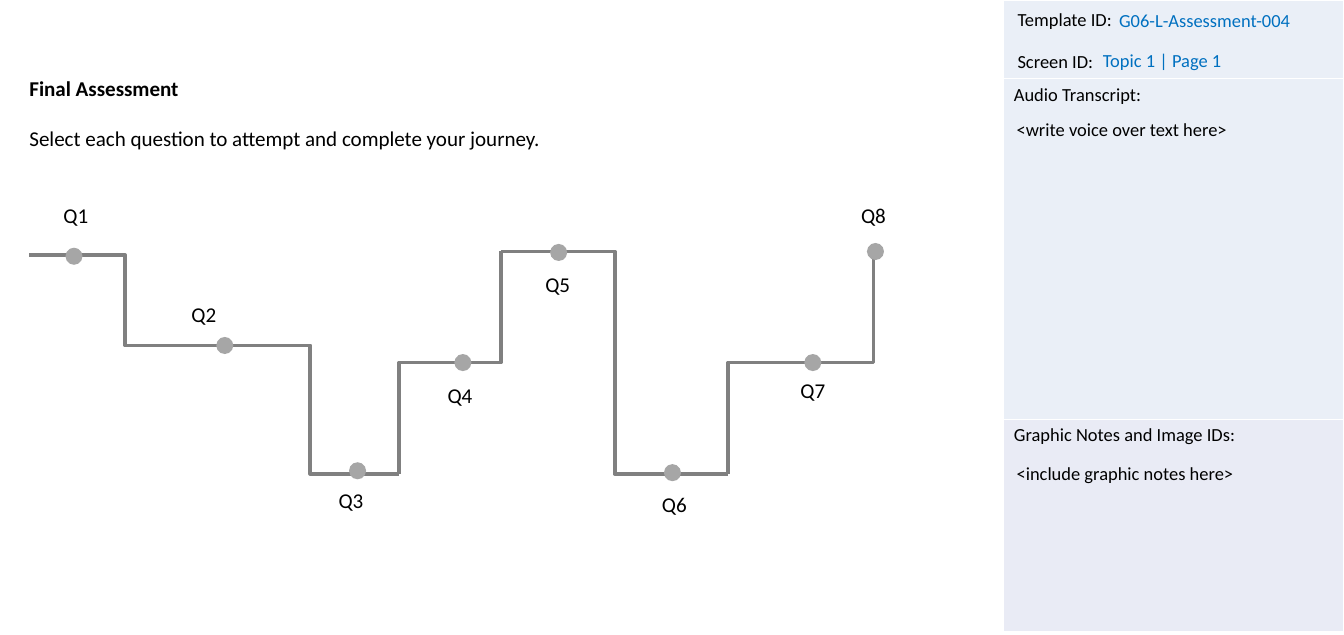
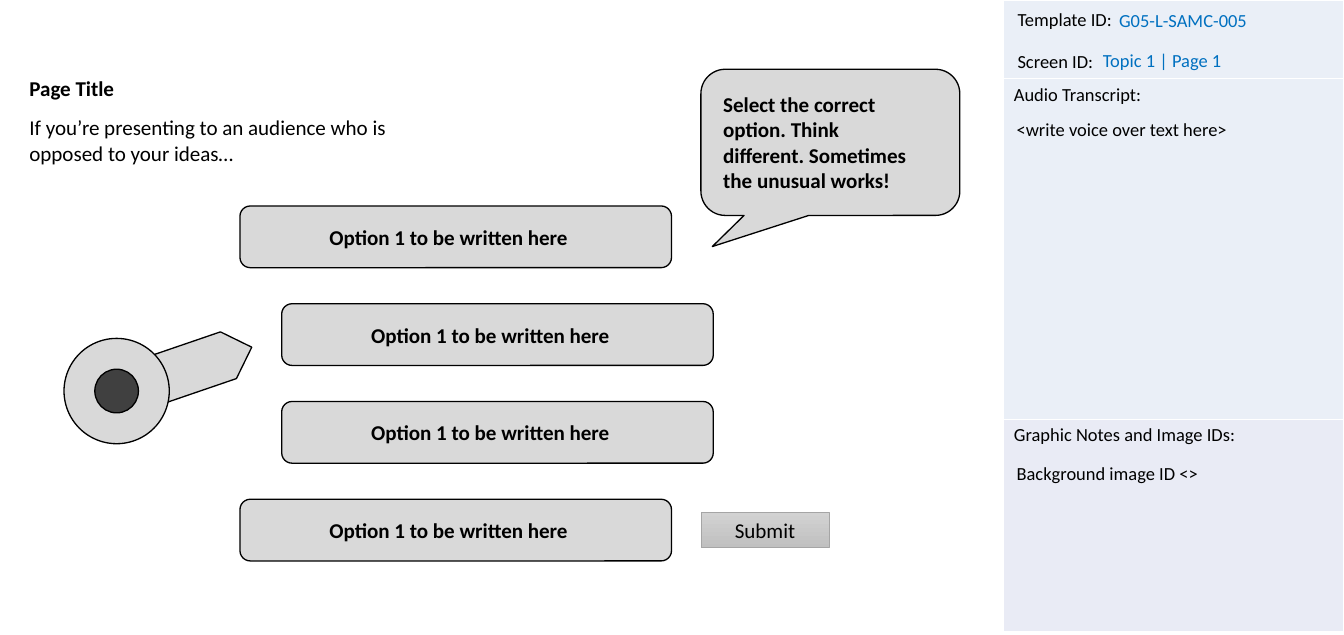
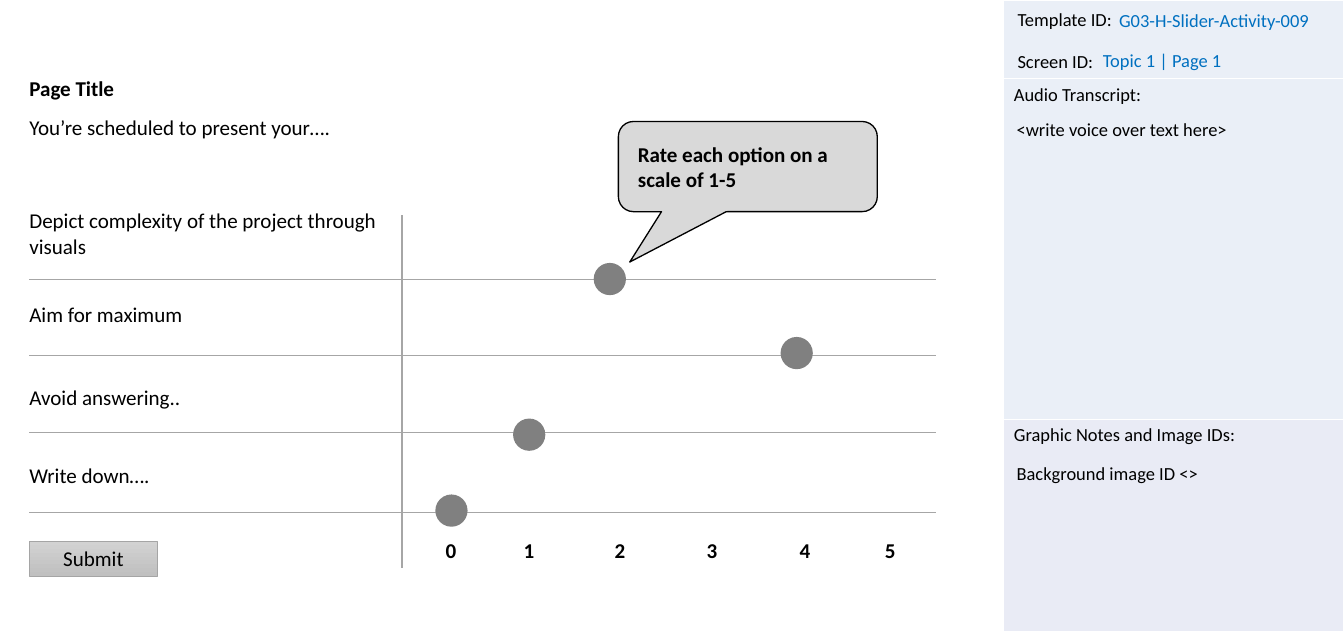
from dataclasses import dataclass

from lxml.etree import SubElement
from pptx import Presentation
from pptx.dml.color import RGBColor
from pptx.enum.shapes import MSO_CONNECTOR as Link, MSO_SHAPE as Kind
from pptx.enum.text import MSO_ANCHOR as Anchor, MSO_AUTO_SIZE as Auto, PP_ALIGN as Align
from pptx.oxml.ns import qn
from pptx.util import Inches, Pt


@dataclass(frozen=True)
class Theme:
    font: str = "Calibri"
    small: int = 14
    text: int = 16
    black: str = "000000"
    blue: str = "0070C0"
    pale: str = "EAEFF7"
    mist: str = "E9EBF5"
    face: str = "D9D9D9"
    core: str = "404040"
    track: str = "808080"
    dot: str = "A6A6A6"
    edge: str = "A5A5A5"
    light: str = "D2D2D2"
    dark: str = "C0C0C0"


LOOK = Theme()
FLAT = (0, 0, 0, 0)
LABEL = (0.1, 0.05, 0.1, 0.05)
ROOMY = (0.16, 0.16, 0.31, 0.16)


def rgb(hue):
    return RGBColor.from_string(hue)


def inch(*sizes):
    return [Inches(size) for size in sizes]


def style(para, size=LOOK.text, hue=LOOK.black, bold=False, align=Align.LEFT):
    para.alignment = align
    font = para.font
    font.name, font.size, font.bold = LOOK.font, Pt(size), bold
    font.color.rgb = rgb(hue)


def write(frame, text, pad=FLAT, anchor=Anchor.TOP, **look):
    frame.text = text
    frame.word_wrap = True
    frame.auto_size = Auto.NONE
    frame.vertical_anchor = anchor
    (frame.margin_left, frame.margin_top,
     frame.margin_right, frame.margin_bottom) = inch(*pad)
    style(frame.paragraphs[0], **look)


def label(slide, x, y, w, h, text, **look):
    box = slide.shapes.add_textbox(*inch(x, y, w, h))
    write(box.text_frame, text, **look)


def block(slide, kind, x, y, w, h, fill=None, line=None, width=1):
    shape = slide.shapes.add_shape(kind, *inch(x, y, w, h))
    shape.shadow.inherit = False
    if fill:
        shape.fill.solid()
        shape.fill.fore_color.rgb = rgb(fill)
    if line:
        shape.line.color.rgb = rgb(line)
        shape.line.width = Pt(width)
    else:
        shape.line.fill.background()
    return shape


def disc(slide, x, y, size, fill, line=None):
    block(slide, Kind.OVAL, x - size / 2, y - size / 2, size, size, fill, line)


def link(slide, kind, start, end, hue, width):
    line = slide.shapes.add_connector(kind, *inch(*start, *end))
    line.line.color.rgb = rgb(hue)
    line.line.width = Pt(width)
    SubElement(line._element.spPr, qn("a:effectLst"))
    return line


def step(slide, start, end):
    (left, top), (right, low) = start, end
    if low > top:
        link(slide, Link.ELBOW, start, end, LOOK.track, 3)
        return
    mid, level = (left + right) / 2, (top + low) / 2
    run, rise = (right - left) / 2, (top - low) / 2
    line = link(slide, Link.ELBOW, (mid + rise, level + run),
                (mid - rise, level - run), LOOK.track, 3)
    line._element.spPr.find(qn("a:xfrm")).set("rot", "5400000")


def panel(slide, x, y, code, notes):
    heights = (0.83, 3.59, 2.23)
    table = slide.shapes.add_table(3, 1, *inch(x, y, 3.59, sum(heights))).table
    table.horz_banding = False
    cells = ("", "Audio Transcript:", "Graphic Notes and Image IDs:")
    fills = (LOOK.pale, LOOK.pale, LOOK.mist)
    for row, high, text, fill in zip(table.rows, heights, cells, fills):
        row.height = Inches(high)
        cell = row.cells[0]
        cell.fill.solid()
        cell.fill.fore_color.rgb = rgb(fill)
        if text:
            cell.text = text
            cell.margin_left = cell.margin_right = Inches(0.11)
            style(cell.text_frame.paragraphs[0], size=LOOK.small)
    entries = (
        (0.05, 0.04, 1.3, "Template ID:", LOOK.black),
        (1.12, 0.05, 2.47, code, LOOK.blue),
        (0.05, 0.48, 1.3, "Screen ID:", LOOK.black),
        (0.95, 0.47, 1.8, "Topic 1 | Page 1", LOOK.blue),
        (0.04, 1.19, 3.5, "<write voice over text here>", LOOK.black),
        (0.04, 4.82, 3.5, notes, LOOK.black),
    )
    for left, top, wide, text, hue in entries:
        label(slide, x + left, y + top, wide, 0.34, text,
              pad=LABEL, size=LOOK.small, hue=hue)


def place(shape, x, y, w, h):
    shape.left, shape.top, shape.width, shape.height = inch(x, y, w, h)


def page(deck, title, prompt, code, notes, gap=0.42, wide=4.17):
    slide = deck.slides.add_slide(deck.slide_layouts[1])
    x, y = 0.31, 0.79
    head, body = slide.shapes.title, slide.placeholders[1]
    place(head, x, y, wide, 0.38)
    write(head.text_frame, title, bold=True)
    place(body, x, y + gap, wide, 0.6)
    write(body.text_frame, prompt)
    para = body.text_frame.paragraphs[0]
    para.space_before = Pt(0)
    props = para._p.get_or_add_pPr()
    props.set("marL", "0")
    props.set("indent", "0")
    props.find(qn("a:spcBef")).addnext(props.makeelement(qn("a:buNone")))
    panel(slide, 10.58, 0, code, notes)
    return slide


def callout(slide, x, y, w, h, text, tip):
    shape = block(slide, Kind.ROUNDED_RECTANGULAR_CALLOUT, x, y, w, h,
                  LOOK.face, LOOK.black)
    shape.adjustments[0], shape.adjustments[1] = -0.456, tip
    write(shape.text_frame, text, pad=ROOMY, bold=True)


def submit(slide, x, y):
    shape = block(slide, Kind.RECTANGLE, x, y, 1.35, 0.37, line=LOOK.edge, width=0.5)
    shape.fill.gradient()
    shape.fill.gradient_angle = 270
    for stop, hue in zip(shape.fill.gradient_stops, (LOOK.light, LOOK.dark)):
        stop.color.rgb = rgb(hue)
    write(shape.text_frame, "Submit", pad=(0, 0.05, 0, 0.05),
          anchor=Anchor.MIDDLE, align=Align.CENTER)


def journey(slide, x, y):
    turns = ((0, 0.59), (2.02, 1.54), (3.9, 2.89), (4.97, 0.55), (7.37, 2.89), (8.9, 0.55))
    spots = [(x + left, y + top) for left, top in turns]
    for start, end in zip(spots, spots[1:]):
        step(slide, start, end)
    stops = (
        (0.47, 0.6, 0.49, 0.03), (2.06, 1.54, 1.84, 1.08),
        (3.46, 2.86, 3.39, 3.04), (4.57, 1.72, 4.54, 1.93),
        (5.58, 0.56, 5.57, 0.76), (6.78, 2.88, 6.8, 3.08),
        (8.26, 1.72, 8.26, 1.88), (8.92, 0.55, 8.9, 0.03),
    )
    for num, (left, top, mid, high) in enumerate(stops, 1):
        disc(slide, x + left, y + top, 0.18, LOOK.dot)
        label(slide, x + mid - 0.45, y + high, 0.9, 0.34, f"Q{num}", align=Align.CENTER)


def options(slide, x, y):
    for row, shift in enumerate((0, 0.44, 0.44, 0)):
        shape = block(slide, Kind.ROUNDED_RECTANGLE, x + shift, y + row * 1.03,
                      4.55, 0.65, LOOK.face, LOOK.black)
        write(shape.text_frame, "Option 1 to be written here", pad=ROOMY,
              anchor=Anchor.MIDDLE, bold=True, align=Align.CENTER)


def dial(slide, x, y):
    arm = block(slide, Kind.PENTAGON, x + 0.71, y + 0.05, 1.31, 0.52,
                LOOK.face, LOOK.black)
    arm.rotation = -18.9
    for size, fill in ((1.11, LOOK.face), (0.46, LOOK.core)):
        disc(slide, x + 0.56, y + 0.56, size, fill, LOOK.black)


def rating(slide, x, y):
    rows = (
        ("Depict complexity of the project through visuals", 0, 0.75, 6.12, 0.75),
        ("Aim for maximum", 0.99, 1.55, 8.09, 1.53),
        ("Avoid answering..", 1.86, 2.37, 5.27, 2.39),
        ("Write down….", 2.68, 3.21, 4.45, 3.19),
    )
    link(slide, Link.STRAIGHT, (x + 3.93, y + 0.08), (x + 3.93, y + 3.79), LOOK.dot, 1)
    for text, top, rule, left, knob in rows:
        label(slide, x, y + top, 3.9, 0.59, text)
        link(slide, Link.STRAIGHT, (x, y + rule), (x + 9.56, y + rule), LOOK.dot, 0.5)
        disc(slide, x + left, y + knob, 0.34, LOOK.track)
    for mark, left in enumerate((4.39, 5.21, 6.17, 7.14, 8.12, 9.02)):
        label(slide, x + left, y + 3.47, 0.74, 0.38, str(mark), bold=True)


def main():
    deck = Presentation()
    deck.slide_width, deck.slide_height = inch(14.17, 6.69)

    slide = page(deck, "Final Assessment",
                 "Select each question to attempt and complete your journey.",
                 "G06-L-Assessment-004", "<include graphic notes here>",
                 gap=0.53, wide=9.53)
    journey(slide, 0.31, 2.1)

    slide = page(deck, "Page Title",
                 "If you’re presenting to an audience who is opposed to your ideas…",
                 "G05-L-SAMC-005", "Background image ID <>")
    callout(slide, 7.39, 0.73, 2.73, 1.54,
            "Select the correct option. Think different. Sometimes the unusual works!", 0.713)
    options(slide, 2.53, 2.17)
    dial(slide, 0.67, 3.56)
    submit(slide, 7.39, 5.4)

    slide = page(deck, "Page Title", "You’re scheduled to present your….",
                 "G03-H-Slider-Activity-009", "Background image ID <>")
    callout(slide, 6.52, 1.28, 2.73, 0.95, "Rate each option on a scale of 1-5", 1.059)
    rating(slide, 0.31, 2.19)
    submit(slide, 0.31, 5.7)

    deck.save("out.pptx")


if __name__ == "__main__":
    main()
